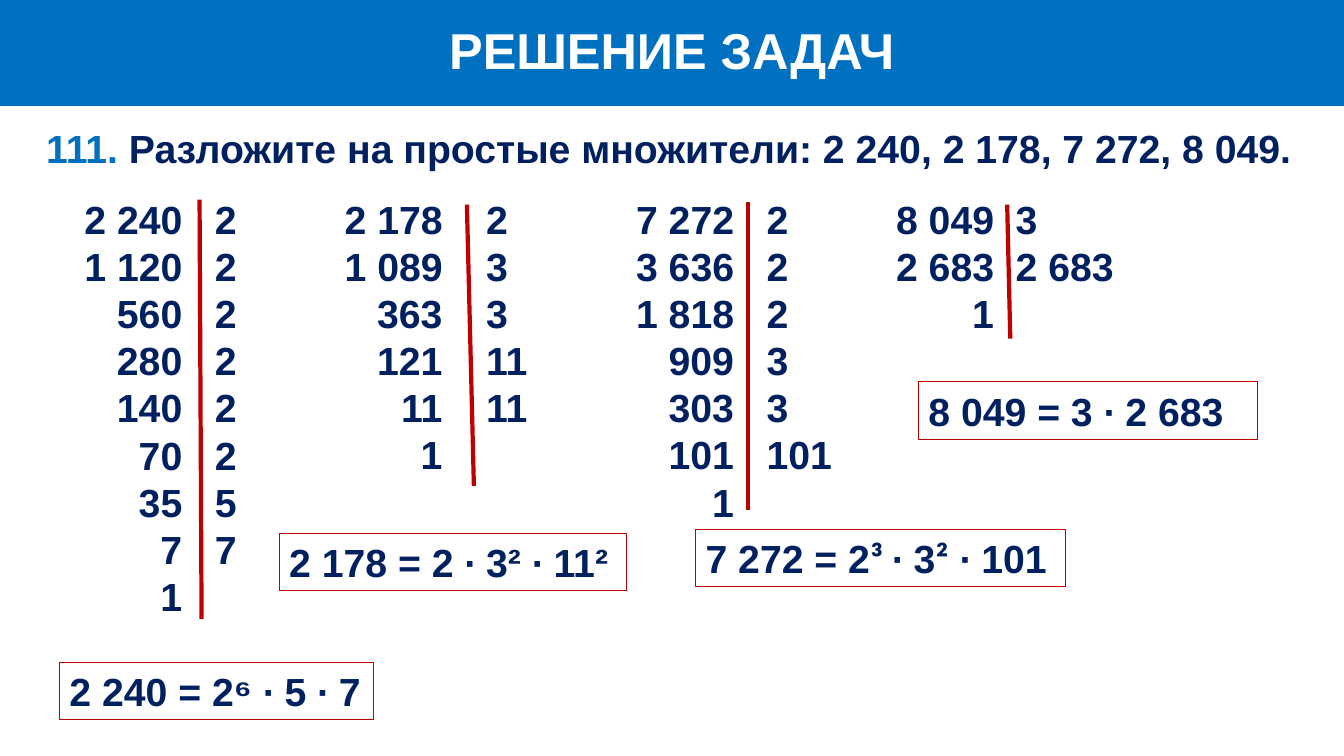
import itertools

import lxml.etree
import pptx
import pptx.dml.color
import pptx.enum.shapes
import pptx.enum.text
import pptx.oxml.ns
import pptx.util

SLIDE_WIDTH = pptx.util.Inches(13.33)
SLIDE_HEIGHT = pptx.util.Inches(7.5)
BLUE, NAVY, RED, WHITE = "0070C0", "002060", "C00000", "FFFFFF"
ROW = 6.27
COLUMN_WIDTH = 18.53
COLUMN_TOP = 25.2
NUMBER_EDGE = 0.97
SPACE = 0.108

# number, factors, column left, spaces before factor, bar ends in column, answer, answer box
TASKS = [
    (2240, [2, 2, 2, 2, 2, 2, 5, 7], 5.55, 3, (9.3, 1.2, 9.45, 56.67),
     "2 240 = 2⁶ ∙ 5 ∙ 7", (4.43, 87.6, 23.33, 7.6)),
    (2178, [2, 3, 3, 11, 11], 24.91, 4, (9.83, 1.87, 10.35, 39.07),
     "2 178 = 2 ∙ 3² ∙ 11²", (20.78, 70.53, 25.81, 7.6)),
    (7272, [2, 2, 2, 3, 3, 101], 46.59, 3, (9.08, 1.47, 9.08, 42.27),
     "7 272 = 2|³ |∙ 3|²| ∙ 101", (51.76, 70, 27.53, 7.6)),
    (8049, [3, 2683], 65.94, 2, (9, 1.87, 9.23, 19.6),
     "8 049 = 3 ∙ 2 683", (68.34, 50.53, 25.21, 7.6)),
]


def color(hex_code):
    """Turn a hex string into a colour."""
    return pptx.dml.color.RGBColor.from_string(hex_code)


def place(left, top, width, height):
    """Turn percentages of the slide into lengths."""
    return (round(SLIDE_WIDTH * left / 100), round(SLIDE_HEIGHT * top / 100),
            round(SLIDE_WIDTH * width / 100), round(SLIDE_HEIGHT * height / 100))


def style(run, hex_code=NAVY, size=28, font="Arial"):
    """Format a run in bold."""
    run.font.name = font
    run.font.size = pptx.util.Pt(size)
    run.font.bold = True
    run.font.color.rgb = color(hex_code)


def add_text_box(slide, box):
    """Add an empty wrapping text box."""
    text_box = slide.shapes.add_textbox(*place(*box))
    text_box.text_frame.word_wrap = True
    return text_box


def add_runs(paragraph, pieces):
    """Append runs given as text, colour and font."""
    for text, hex_code, font in pieces:
        run = paragraph.add_run()
        run.text = text
        style(run, hex_code, font=font)


def set_tabs(paragraph, stops):
    """Give a paragraph tab stops as alignment and inches."""
    properties = paragraph._p.get_or_add_pPr()
    tab_list = lxml.etree.SubElement(properties, pptx.oxml.ns.qn("a:tabLst"))
    for alignment, inches in stops:
        lxml.etree.SubElement(tab_list, pptx.oxml.ns.qn("a:tab"),
                              pos=str(pptx.util.Inches(inches)), algn=alignment)


def add_header(slide, box):
    """Place the banner and the slide title on it."""
    left, top, width, height = box
    banner = slide.shapes.add_shape(
        pptx.enum.shapes.MSO_SHAPE.RECTANGLE, *place(*box))
    banner.shadow.inherit = False
    banner.fill.solid()
    banner.fill.fore_color.rgb = color(BLUE)
    banner.line.fill.background()

    title = slide.shapes.title
    title.element.addprevious(banner.element)
    title.left, title.top, title.width, title.height = place(
        left, top + height * 0.13, width, height * 0.68)
    title.text_frame.text = "РЕШЕНИЕ ЗАДАЧ"
    title.text_frame.vertical_anchor = pptx.enum.text.MSO_ANCHOR.MIDDLE
    heading = title.text_frame.paragraphs[0]
    heading.alignment = pptx.enum.text.PP_ALIGN.CENTER
    style(heading.runs[0], WHITE, 36)


def add_question(slide, box):
    """Write the numbered question."""
    question = add_text_box(slide, box)
    add_runs(question.text_frame.paragraphs[0], [
        ("111. ", BLUE, "Arial"),
        ("Разложите на простые множители: 2 240, 2 178, 7 272, 8 049.", NAVY, "Arial"),
    ])


def grouped(number):
    """Write a number with spaces between thousands."""
    return f"{number:,}".replace(",", " ")


def division_rows(number, factors):
    """List the quotients with their divisors, down to 1."""
    quotients = itertools.accumulate(factors, lambda rest, factor: rest // factor,
                                     initial=number)
    return ["\t" + "\t".join(grouped(value) for value in pair if value)
            for pair in itertools.zip_longest(quotients, factors)]


def add_division(slide, box, rows, spaces, bar_ends):
    """Write the division column and draw its bar."""
    left, top = box[:2]
    division = add_text_box(slide, box)
    division.text_frame.text = "\n".join(rows)
    for paragraph in division.text_frame.paragraphs:
        set_tabs(paragraph, [("r", NUMBER_EDGE), ("l", NUMBER_EDGE + spaces * SPACE)])
        for run in paragraph.runs:
            style(run)

    start_x, start_y, end_x, end_y = bar_ends
    bar = slide.shapes.add_connector(
        pptx.enum.shapes.MSO_CONNECTOR.STRAIGHT,
        *place(left + start_x, top + start_y, left + end_x, top + end_y))
    bar.line.color.rgb = color(RED)
    bar.line.width = pptx.util.Pt(3)
    lxml.etree.SubElement(bar.element.spPr, pptx.oxml.ns.qn("a:effectLst"))


def add_answer(slide, box, answer):
    """Write a framed answer, with every second piece in Calibri."""
    frame = add_text_box(slide, box)
    frame.line.color.rgb = color(RED)
    frame.line.width = pptx.util.Pt(0.75)
    fonts = itertools.cycle(["Arial", "Calibri"])
    add_runs(frame.text_frame.paragraphs[0],
             [(piece, NAVY, font) for piece, font in zip(answer.split("|"), fonts)])


def main():
    """Build and save the slide."""
    presentation = pptx.Presentation()
    presentation.slide_width = SLIDE_WIDTH
    presentation.slide_height = SLIDE_HEIGHT
    slide = presentation.slides.add_slide(presentation.slide_layouts[5])
    add_header(slide, (0, 0, 100, 14))
    add_question(slide, (2.7, 15.73, 94.67, 7.6))
    for number, factors, left, spaces, bar_ends, answer, answer_box in TASKS:
        rows = division_rows(number, factors)
        column = (left, COLUMN_TOP, COLUMN_WIDTH, len(rows) * ROW + 1.33)
        add_division(slide, column, rows, spaces, bar_ends)
        add_answer(slide, answer_box, answer)
    presentation.save("out.pptx")


if __name__ == "__main__":
    main()
